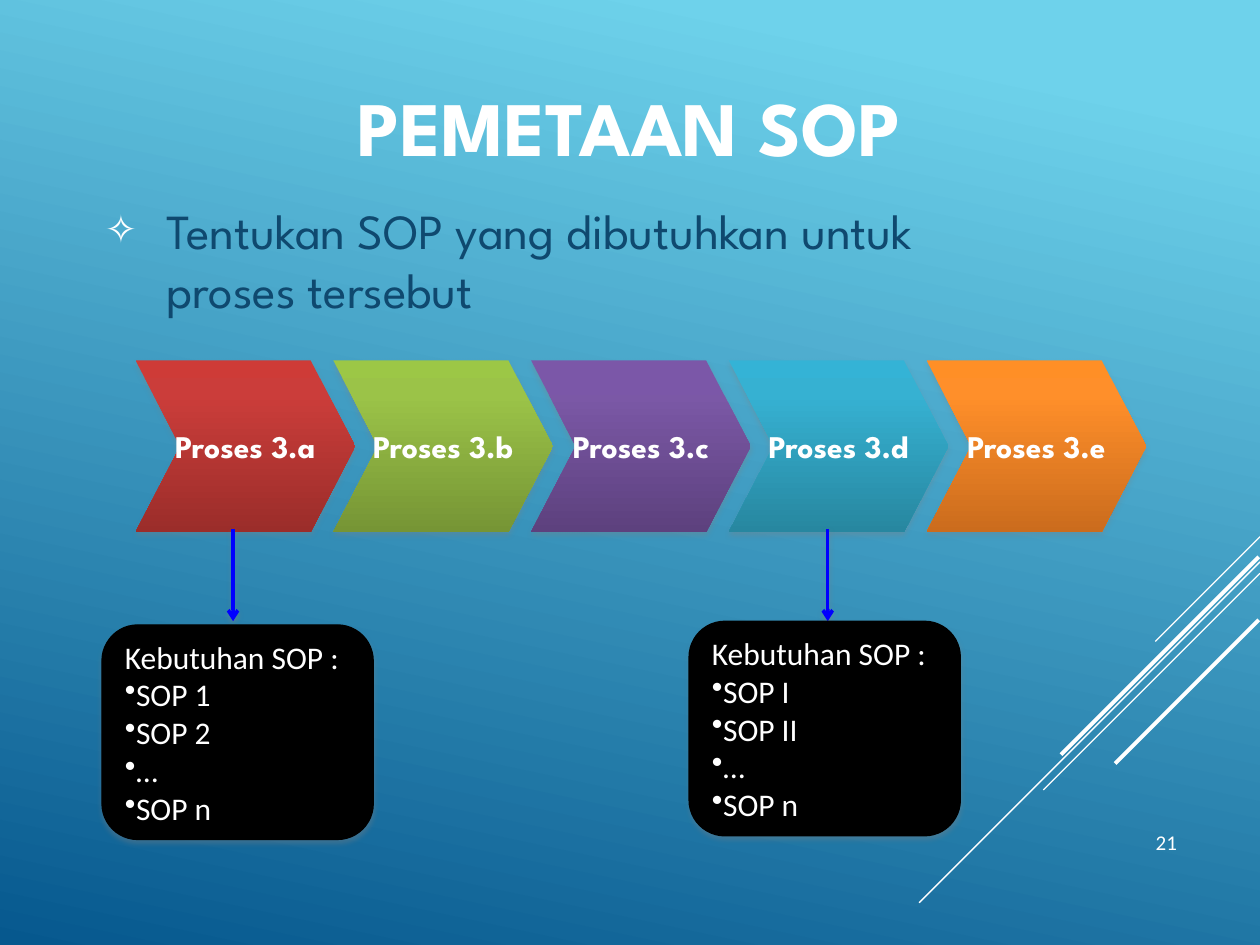
from lxml.etree import SubElement
from pptx import Presentation
from pptx.dml.color import RGBColor
from pptx.enum.shapes import MSO_CONNECTOR, MSO_SHAPE
from pptx.enum.text import MSO_ANCHOR, MSO_AUTO_SIZE, PP_ALIGN
from pptx.oxml.ns import qn
from pptx.util import Pt

# Content
TITLE = "PEMETAAN SOP"
BODY = "Tentukan SOP yang dibutuhkan untuk proses tersebut"
PAGE = "21"
HEADING = "Kebutuhan SOP :"
STEPS = [  # label, gradient stops at 0, 20 and 100 %
    ("Proses 3.a", ("CE3B37", "CB3D3A", "9B2D2A")),
    ("Proses 3.b", ("9CC746", "9BC348", "769535")),
    ("Proses 3.c", ("7B57A8", "7B58A6", "5D417E")),
    ("Proses 3.d", ("34B3D6", "36B1D2", "2787A0")),
    ("Proses 3.e", ("FF8F26", "FF8F2A", "CB6C1D")),
]
NEEDS = [  # box left, box top, arrow x, items
    (58.3, 357.1, 133.2, ["SOP 1", "SOP 2", "…", "SOP n"]),
    (393.8, 355, 473, ["SOP I", "SOP II", "…", "SOP n"]),
]
STRIPES = [  # start x, start y, horizontal run, width; all rise at 45 degrees
    (720, 306.7, 59.8, 0.75),
    (720, 321.1, 194.8, 0.75),
    (720, 327.6, 123.8, 0.75),
    (719.3, 318.2, 113, 2.25),
    (719.3, 354.2, 82.1, 2.25),
]
HEAD_FONT, TEXT_FONT = "League Spartan", "Calibri"
STEP_X, STEP_Y, STEP_W, STEP_H, STEP_PITCH = 77.5, 206, 125.5, 98, 113
CHEVRON_POINT = 0.26
BOX_W, BOX_H = 155, 122.6
ARROW_TOP, ARROW_BOTTOM = 302.4, 355


def rgb(code):
    return RGBColor.from_string(code)


def sub(parent, tag, **attrs):
    return SubElement(parent, qn(tag), {k: str(v) for k, v in attrs.items()})


def set_gradient(fill, root, stops, angle):
    fill.gradient()
    fill.gradient_angle = 360 - angle
    gs_list = next(root.iter(qn("a:gsLst")))
    for old in list(gs_list):
        gs_list.remove(old)
    for pos, color in stops:
        sub(sub(gs_list, "a:gs", pos=pos * 1000), "a:srgbClr", val=color)


def add_shadow(effects, dist=1.8, alpha=35):
    shadow = sub(effects, "a:outerShdw", blurRad=Pt(3.1), dist=Pt(dist),
                 dir=90 * 60000, rotWithShape=0)
    sub(sub(shadow, "a:srgbClr", val="808080"), "a:alpha", val=alpha * 1000)


def style(p, size, font, color, bold=False, align=PP_ALIGN.LEFT):
    p.alignment = align
    p.font.size, p.font.name, p.font.bold = Pt(size), font, bold
    p.font.color.rgb = rgb(color)


def add_bullet(p, char, color=None, percent=None):
    pPr = p._p.get_or_add_pPr()
    if color:
        sub(sub(pPr, "a:buClr"), "a:srgbClr", val=color)
    if percent:
        sub(pPr, "a:buSzPct", val=percent * 1000)
    sub(pPr, "a:buChar", char=char)


def place(sp, x, y, w, h, anchor):
    sp.left, sp.top, sp.width, sp.height = Pt(x), Pt(y), Pt(w), Pt(h)
    tf = sp.text_frame
    tf.word_wrap, tf.auto_size = True, MSO_AUTO_SIZE.NONE
    tf.vertical_anchor = anchor
    return tf


def add_line(x1, y1, x2, y2, color, width):
    """Add a straight line and return it with its empty effect list."""
    line = s.shapes.add_connector(MSO_CONNECTOR.STRAIGHT, Pt(x1), Pt(y1), Pt(x2), Pt(y2))
    line.line.color.rgb = rgb(color)
    line.line.width = Pt(width)
    return line, sub(line._element.spPr, "a:effectLst")


def add_box(kind, x, y, w, h, adjust):
    """Add a preset shape with a soft shadow."""
    sp = s.shapes.add_shape(kind, Pt(x), Pt(y), Pt(w), Pt(h))
    sp.adjustments[0] = adjust
    sp.shadow.inherit = False
    add_shadow(sp._element.spPr.find(qn("a:effectLst")))
    sp.text_frame.vertical_anchor = MSO_ANCHOR.MIDDLE
    return sp


prs = Presentation()
prs.slide_width, prs.slide_height = Pt(720), Pt(540)
s = prs.slides.add_slide(prs.slide_layouts[1])
title, body = s.placeholders

# Background and corner stripes
set_gradient(s.background.fill, s._element, [(10, "6ED2EB"), (100, "06588E")], 102)
for x, y, run, width in STRIPES:
    add_line(x, y, x - run, y + run, "FFFFFF", width)

# Title
tf = place(title, 0, 26.6, 720, 90, MSO_ANCHOR.MIDDLE)
tf.text = TITLE
style(tf.paragraphs[0], 44, HEAD_FONT, "FFFFFF", True, PP_ALIGN.CENTER)

# Body
tf = place(body, 52.6, 0, 516.2, 296.6, MSO_ANCHOR.MIDDLE)
tf.text = BODY
p = tf.paragraphs[0]
p.space_before = p.space_after = Pt(6)
pPr = p._p.get_or_add_pPr()
pPr.set("marL", str(Pt(35.3)))
pPr.set("indent", str(Pt(-35.3)))
add_bullet(p, "✧", "FFFFFF", 80)
style(p, 28, HEAD_FONT, "0F496F")

# Page number
tf = place(s.shapes.add_textbox(0, 0, 0, 0), 612, 439.2, 67.7, 52.6, MSO_ANCHOR.BOTTOM)
tf.text = PAGE
style(tf.paragraphs[0], 12, TEXT_FONT, "FFFFFF", align=PP_ALIGN.RIGHT)

# Process chevrons
for i, (label, colors) in enumerate(STEPS):
    sp = add_box(MSO_SHAPE.CHEVRON, STEP_X + i * STEP_PITCH, STEP_Y,
                 STEP_W, STEP_H, CHEVRON_POINT)
    set_gradient(sp.fill, sp._element, zip((0, 20, 100), colors), 90)
    sp.line.fill.background()
    tf = sp.text_frame
    tf.word_wrap = False
    tf.margin_left = tf.margin_right = 0
    tf.text = label
    style(tf.paragraphs[0], 18, HEAD_FONT, "FFFFFF", True, PP_ALIGN.CENTER)

# Arrows and boxes of needed procedures
for x, y, arrow_x, items in NEEDS:
    arrow, effects = add_line(arrow_x, ARROW_TOP, arrow_x, ARROW_BOTTOM, "0000FF", 2)
    sub(arrow.line._get_or_add_ln(), "a:tailEnd", type="arrow")
    add_shadow(effects, 1.6, 38)

    sp = add_box(MSO_SHAPE.ROUNDED_RECTANGLE, x, y, BOX_W, BOX_H, 0.167)
    sp.fill.solid()
    sp.fill.fore_color.rgb = sp.line.color.rgb = rgb("000000")
    sp.line.width = Pt(0.75)
    tf = sp.text_frame
    tf.text = "\n".join([HEADING, *items])
    for p in tf.paragraphs:
        if p.text != HEADING:
            add_bullet(p, "•")
        style(p, 18, TEXT_FONT, "FFFFFF")

prs.save("out.pptx")
